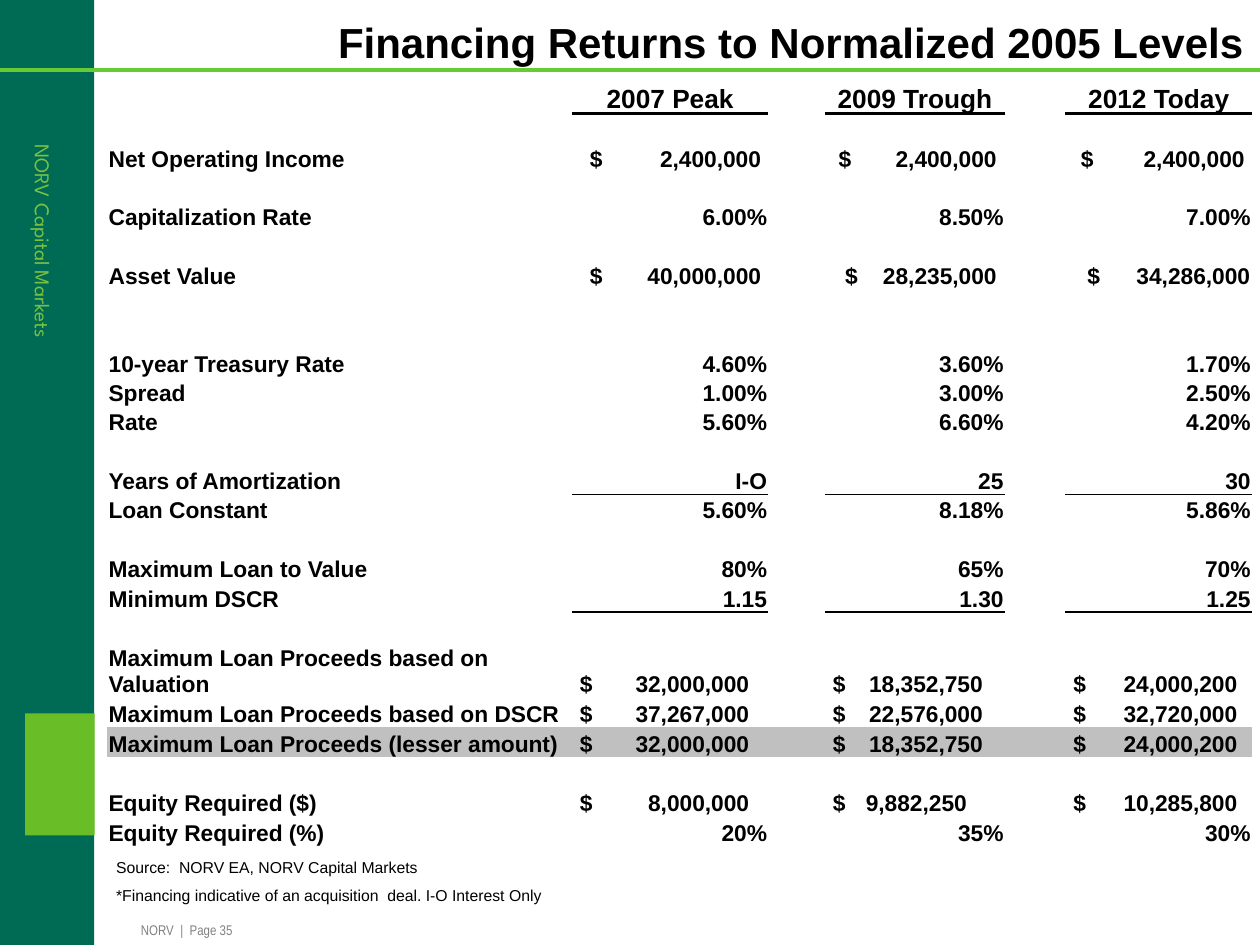
"""Build the financing returns slide with its loan comparison table."""
import lxml.etree
import pptx
import pptx.dml.color
import pptx.enum.shapes
import pptx.enum.text
import pptx.oxml.ns
import pptx.util

Cm = pptx.util.Cm
Pt = pptx.util.Pt
qn = pptx.oxml.ns.qn
RGBColor = pptx.dml.color.RGBColor
ALIGN = pptx.enum.text.PP_ALIGN
ANCHOR = pptx.enum.text.MSO_ANCHOR
SHAPE = pptx.enum.shapes.MSO_SHAPE

BLACK = RGBColor(0x00, 0x00, 0x00)
WHITE = RGBColor(0xFF, 0xFF, 0xFF)
SILVER = RGBColor(0xC0, 0xC0, 0xC0)
GRAY = RGBColor(0x80, 0x80, 0x80)
PINE = RGBColor(0x00, 0x6B, 0x54)
LEAF = RGBColor(0x7A, 0xC1, 0x42)
LIME = RGBColor(0x69, 0xBE, 0x28)
RULE = RGBColor(0x66, 0xCC, 0x33)

NO_STYLE = "{2D5ABB26-0587-4C30-8999-92F81FD0307C}"
COLUMNS = [9.37, 3.96, 1.14, 3.63, 1.22, 3.76]
ROW_HEIGHT = 0.58
ROW_HEIGHTS = {0: 0.66, 17: 0.61, 19: 1.12, 20: 0.61, 21: 0.61, 24: 0.61}
UNDERLINES = {0: 1.5, 13: 0.5, 17: 1}
HIGHLIGHT_ROW = 21

WIDE = [(0.33, 3.78), (0.25, 3.43), (0.28, 3.58)]
ASSET = [(0.33, 3.78), (0.38, 3.43), (0.41, 3.69)]
NARROW = [(0.13, 3.54), (0.13, 3.15), (0.13, 3.43)]
EQUITY = [(0.13, 3.54), (0.13, 2.83), (0.13, 3.43)]

ROWS = [
    ("", ["2007 Peak", "2009 Trough", "2012 Today"], None),
    None,
    ("Net Operating Income", ["2,400,000", "2,400,000", "2,400,000"], WIDE),
    None,
    ("Capitalization Rate", ["6.00%", "8.50%", "7.00%"], None),
    None,
    ("Asset Value", ["40,000,000", "28,235,000", "34,286,000"], ASSET),
    None,
    None,
    ("10-year Treasury Rate", ["4.60%", "3.60%", "1.70%"], None),
    ("Spread", ["1.00%", "3.00%", "2.50%"], None),
    ("Rate", ["5.60%", "6.60%", "4.20%"], None),
    None,
    ("Years of Amortization", ["I-O", "25", "30"], None),
    ("Loan Constant", ["5.60%", "8.18%", "5.86%"], None),
    None,
    ("Maximum Loan to Value", ["80%", "65%", "70%"], None),
    ("Minimum DSCR", ["1.15", "1.30", "1.25"], None),
    None,
    ("Maximum Loan Proceeds based on Valuation",
     ["32,000,000", "18,352,750", "24,000,200"], NARROW),
    ("Maximum Loan Proceeds based on DSCR",
     ["37,267,000", "22,576,000", "32,720,000"], NARROW),
    ("Maximum Loan Proceeds (lesser amount)",
     ["32,000,000", "18,352,750", "24,000,200"], NARROW),
    None,
    ("Equity Required ($)", ["8,000,000", "9,882,250", "10,285,800"], EQUITY),
    ("Equity Required (%)", ["20%", "35%", "30%"], None),
]


def write(p, text, size=13, font="Arial", color=BLACK, bold=False,
          align=ALIGN.LEFT, before=0, stops=None):
    p.alignment = align
    p.space_before = Pt(before)
    if stops:
        tabs = lxml.etree.SubElement(p._p.get_or_add_pPr(), qn("a:tabLst"))
        for pos, algn in zip(stops, ("l", "r")):
            lxml.etree.SubElement(tabs, qn("a:tab"), pos=str(Cm(pos)), algn=algn)
    if not text:
        lxml.etree.SubElement(p._p, qn("a:endParaRPr"), sz=str(size * 100))
        return
    r = p.add_run()
    r.text = text
    r.font.size = Pt(size)
    r.font.name = font
    r.font.bold = bold
    r.font.color.rgb = color


class Deck:
    def __init__(self):
        self.prs = pptx.Presentation()
        self.prs.slide_width = Cm(25.4)
        self.prs.slide_height = Cm(19.05)
        self.s = self.prs.slides.add_slide(self.prs.slide_layouts[5])

    def frame(self, tf, wrap=True, anchor=ANCHOR.TOP):
        tf.margin_left = tf.margin_right = tf.margin_top = tf.margin_bottom = 0
        tf.word_wrap = wrap
        tf.vertical_anchor = anchor
        tf.auto_size = pptx.enum.text.MSO_AUTO_SIZE.NONE

    def title(self, text, x, y, w, h):
        sp = self.s.shapes.title
        sp.left, sp.top, sp.width, sp.height = Cm(x), Cm(y), Cm(w), Cm(h)
        self.frame(sp.text_frame, anchor=ANCHOR.BOTTOM)
        write(sp.text_frame.paragraphs[0], text, size=24, bold=True, align=ALIGN.RIGHT)

    def block(self, kind, color, x, y, w, h):
        sp = self.s.shapes.add_shape(kind, Cm(x), Cm(y), Cm(w), Cm(h))
        sp.shadow.inherit = False
        sp.fill.solid()
        sp.fill.fore_color.rgb = color
        sp.line.fill.background()

    def rule(self, x1, y1, x2, y2, color, width):
        ln = self.s.shapes.add_connector(
            pptx.enum.shapes.MSO_CONNECTOR.STRAIGHT, Cm(x1), Cm(y1), Cm(x2), Cm(y2))
        ln.line.color.rgb = color
        ln.line.width = Pt(width)
        lxml.etree.SubElement(ln._element.spPr, qn("a:effectLst"))

    def text(self, lines, x, y, w, h, wrap=True, rotation=0, gap=0, **style):
        sp = self.s.shapes.add_textbox(Cm(x), Cm(y), Cm(w), Cm(h))
        sp.rotation = rotation
        tf = sp.text_frame
        self.frame(tf, wrap)
        for i, line in enumerate(lines):
            p = tf.add_paragraph() if i else tf.paragraphs[0]
            write(p, line, before=gap if i else 0, **style)

    def cell(self, cell, text, fill, underline=None, **style):
        cell.margin_left = cell.margin_right = cell.margin_top = Cm(0.03)
        cell.margin_bottom = 0
        cell.vertical_anchor = ANCHOR.BOTTOM
        cell.fill.solid()
        cell.fill.fore_color.rgb = fill
        write(cell.text_frame.paragraphs[0], text, bold=True, **style)
        if underline:
            ln = lxml.etree.Element(qn("a:lnB"), w=str(Pt(underline)))
            paint = lxml.etree.SubElement(ln, qn("a:solidFill"))
            lxml.etree.SubElement(paint, qn("a:srgbClr"), val=str(BLACK))
            cell._tc.get_or_add_tcPr().insert(0, ln)

    def table(self, rows, x, y):
        heights = [ROW_HEIGHTS.get(i, ROW_HEIGHT) for i in range(len(rows))]
        gf = self.s.shapes.add_table(len(rows), len(COLUMNS), Cm(x), Cm(y),
                                     Cm(sum(COLUMNS)), Cm(sum(heights)))
        tbl = gf.table
        tbl.first_row = tbl.horz_banding = False
        gf._element.find(".//" + qn("a:tableStyleId")).text = NO_STYLE
        for col, width in zip(tbl.columns, COLUMNS):
            col.width = Cm(width)
        for i, row in enumerate(rows):
            tbl.rows[i].height = Cm(heights[i])
            fill = SILVER if i == HIGHLIGHT_ROW else WHITE
            label, values, stops = row or ("", ["", "", ""], None)
            self.cell(tbl.cell(i, 0), label, fill)
            for j, value in enumerate(values):
                if j:
                    self.cell(tbl.cell(i, 2 * j), "", fill)
                style = {"align": ALIGN.RIGHT}
                if i == 0:
                    style = {"align": ALIGN.CENTER, "size": 15}
                elif stops:
                    value, style = f"\t$\t{value}", {"stops": stops[j]}
                self.cell(tbl.cell(i, 2 * j + 1), value, fill, UNDERLINES.get(i), **style)


def main():
    d = Deck()
    d.block(SHAPE.RECTANGLE, PINE, 0, 0, 1.9, 19.05)
    d.text(["NORV  |  Page 35"], 2.84, 18.57, 3.76, 0.43, wrap=False,
           size=8, font="Arial Narrow", color=GRAY)
    d.rule(0, 1.42, 25.4, 1.42, RULE, 2.25)
    d.text(["NORV Capital Markets"], -0.97, 4.57, 3.76, 0.43, wrap=False,
           rotation=90, size=12, font="League Spartan", color=LEAF)
    d.block(SHAPE.RECTANGLE, LIME, 0.51, 14.38, 1.4, 2.46)
    d.title("Financing Returns to Normalized 2005 Levels", 2.97, 0.15, 22.1, 1.19)
    d.text(["Source:  NORV EA, NORV Capital Markets",
            "*Financing indicative of an acquisition  deal. I-O Interest Only"],
           2.34, 17.3, 14.4, 0.97, gap=5, size=9)
    d.table(ROWS, 2.16, 1.63)
    d.prs.save("out.pptx")


if __name__ == "__main__":
    main()
